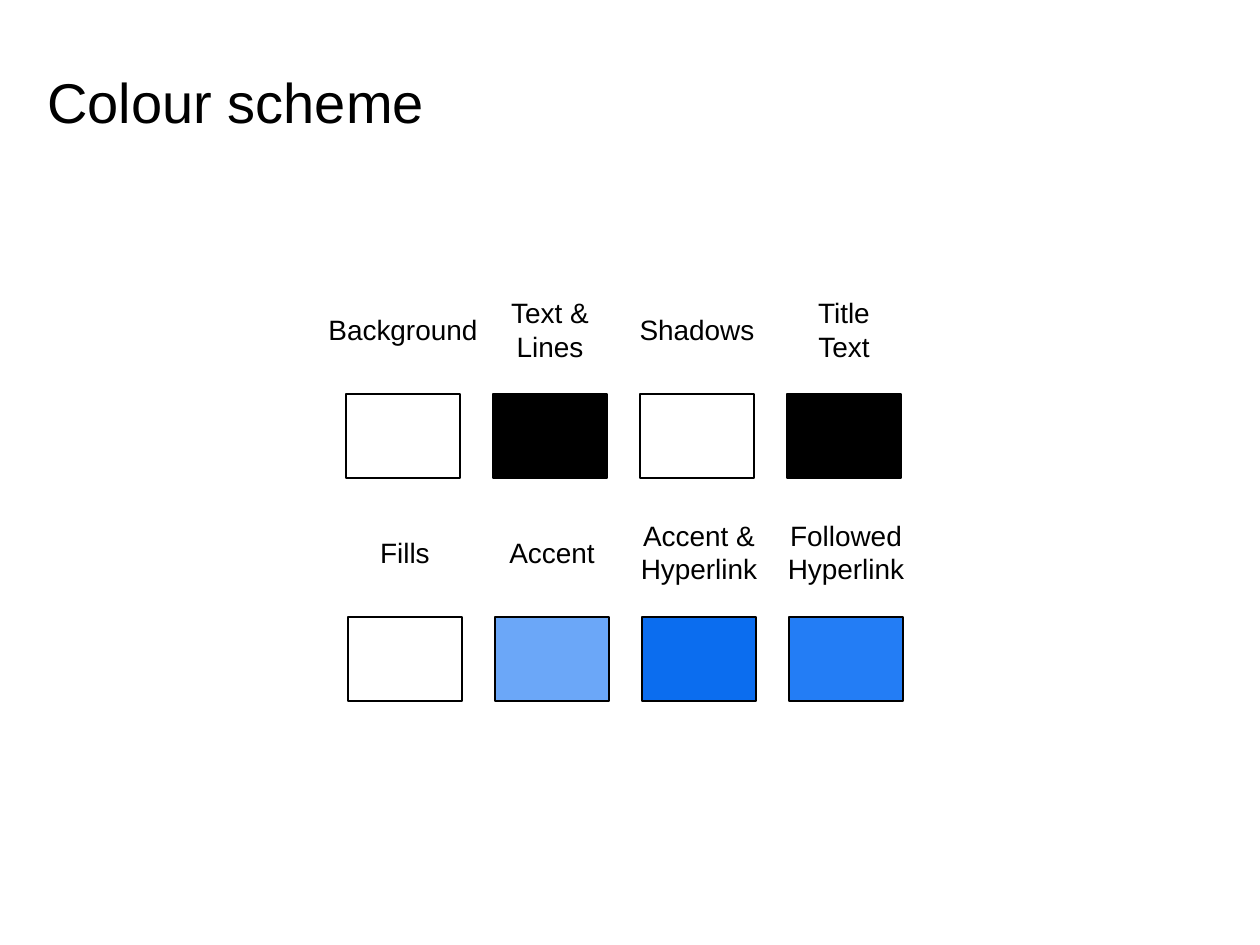
"""Build the colour scheme slide: a title band and two rows of labelled swatches."""
import pptx
import pptx.dml.color
import pptx.enum.shapes
import pptx.enum.text
import pptx.util

PX = 914400 / 126
COLOURS = {
    "black": "000000",
    "white": "FFFFFF",
    "light blue": "6BA7F8",
    "strong blue": "0B6DEF",
    "mid blue": "237DF5",
}
SWATCH_WIDTH, SWATCH_HEIGHT, PITCH = 114, 84, 147
LABEL_RISE = 65


def px(*lengths):
    return [pptx.util.Emu(round(length * PX)) for length in lengths]


def add_text(text, left, top, width, height, size, align, wrap, fit):
    box = slide.shapes.add_textbox(*px(left, top, width, height))
    frame = box.text_frame
    frame.word_wrap = wrap
    frame.auto_size = fit
    frame.vertical_anchor = pptx.enum.text.MSO_ANCHOR.MIDDLE
    frame.text = text
    for paragraph in frame.paragraphs:
        paragraph.alignment = align
        paragraph.font.name = "Arial"
        paragraph.font.size = pptx.util.Pt(size)
        paragraph.font.color.rgb = pptx.dml.color.RGBColor.from_string(COLOURS["black"])


presentation = pptx.Presentation()
presentation.slide_width, presentation.slide_height = px(1260, 945)
slide = presentation.slides.add_slide(presentation.slide_layouts[6])

title_band = slide.shapes.add_shape(
    pptx.enum.shapes.MSO_SHAPE.RECTANGLE, *px(0, 0, 997, 198))
title_band.shadow.inherit = False
title_band.fill.solid()
title_band.fill.fore_color.rgb = pptx.dml.color.RGBColor.from_string(COLOURS["white"])
title_band.line.fill.background()

add_text("Colour scheme", 35, 38, 942, 127, size=32,
         align=pptx.enum.text.PP_ALIGN.LEFT, wrap=True,
         fit=pptx.enum.text.MSO_AUTO_SIZE.NONE)

rows = [
    (346, 394, [("Background", 175, "white"), ("Text &\nLines", 106, "black"),
                ("Shadows", 140, "white"), ("Title\vText", 79, "black")]),
    (348, 617, [("Fills", 76, "white"), ("Accent", 112, "light blue"),
                ("Accent &\nHyperlink", 143, "strong blue"),
                ("Followed\nHyperlink", 143, "mid blue")]),
]
for row_left, row_top, entries in rows:
    for column, (label, label_width, colour) in enumerate(entries):
        left = row_left + column * PITCH
        swatch = slide.shapes.add_shape(
            pptx.enum.shapes.MSO_SHAPE.RECTANGLE,
            *px(left, row_top, SWATCH_WIDTH, SWATCH_HEIGHT))
        swatch.shadow.inherit = False
        swatch.fill.solid()
        swatch.fill.fore_color.rgb = pptx.dml.color.RGBColor.from_string(COLOURS[colour])
        swatch.line.color.rgb = pptx.dml.color.RGBColor.from_string(COLOURS["black"])
        swatch.line.width = pptx.util.Pt(0.75)

        label_height = 46 if len(label.split()) == 1 else 81
        add_text(label, left + (SWATCH_WIDTH - label_width) / 2,
                 row_top - LABEL_RISE - label_height / 2, label_width, label_height,
                 size=16, align=pptx.enum.text.PP_ALIGN.CENTER, wrap=False,
                 fit=pptx.enum.text.MSO_AUTO_SIZE.SHAPE_TO_FIT_TEXT)

presentation.save("out.pptx")
